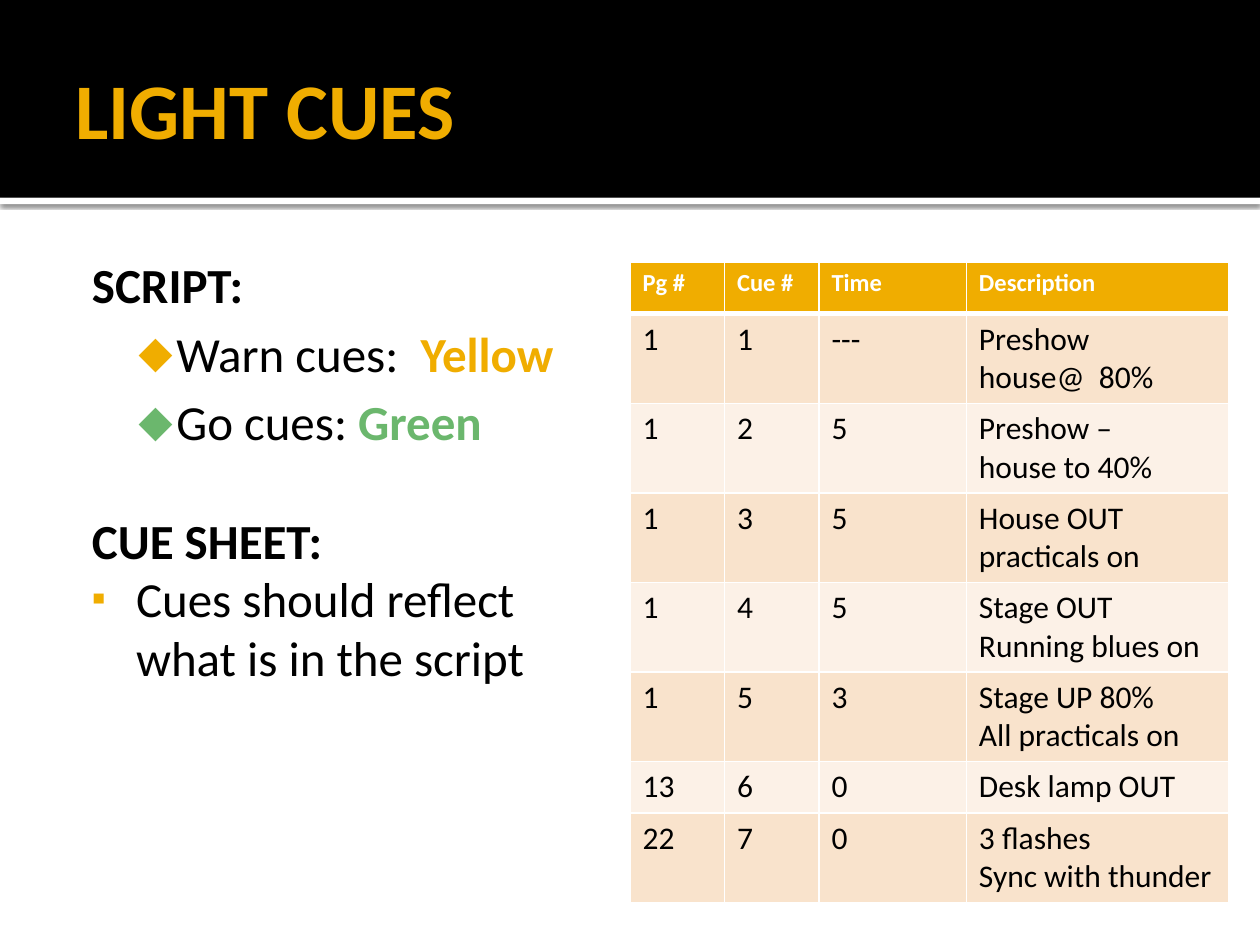
from lxml.etree import SubElement
from pptx import Presentation
from pptx.dml.color import RGBColor
from pptx.enum.shapes import MSO_SHAPE
from pptx.enum.text import MSO_ANCHOR, MSO_AUTO_SIZE, PP_ALIGN
from pptx.oxml import parse_xml
from pptx.oxml.ns import nsdecls, qn
from pptx.util import Inches, Pt

BLACK = RGBColor(0x00, 0x00, 0x00)
WHITE = RGBColor(0xFF, 0xFF, 0xFF)
AMBER = RGBColor(0xF0, 0xAD, 0x00)
GREEN = RGBColor(0x6B, 0xB7, 0x6D)
PEACH = RGBColor(0xF9, 0xE3, 0xCC)
CREAM = RGBColor(0xFC, 0xF1, 0xE7)
FONT = "Calibri"

# Content
TITLE = "LIGHT CUES"
# Styles: level, left margin, first-line indent, bullet, bullet size %
HEADING = (0, 0.13, 0, None, None)
CUE = (1, 0.8, -0.3, "◆", 90)
POINT = (0, 0.48, -0.35, "▪", 80)
# Paragraphs: style, space before in points, bullet colour, runs of (text, colour, bold)
NOTES = [
    (HEADING, 0, None, [("SCRIPT:", BLACK, True)]),
    (CUE, 5.6, AMBER, [("Warn cues:  ", BLACK, False), ("Yellow", AMBER, True)]),
    (CUE, 5.6, GREEN, [("Go cues: ", BLACK, False), ("Green", GREEN, True)]),
    (HEADING, 34, None, [("CUE SHEET:", BLACK, True)]),
    (POINT, 0, AMBER, [("Cues should reflect what is in the script", BLACK, False)]),
]
CUE_SHEET = [
    ("Pg #", "Cue #", "Time", "Description"),
    ("1", "1", "---", "Preshow\nhouse@  80%"),
    ("1", "2", "5", "Preshow –\nhouse to 40%"),
    ("1", "3", "5", "House OUT practicals on"),
    ("1", "4", "5", "Stage OUT\nRunning blues on"),
    ("1", "5", "3", "Stage UP 80%\nAll practicals on"),
    ("13", "6", "0", "Desk lamp OUT"),
    ("22", "7", "0", "3 flashes\nSync with thunder"),
]
COLUMN_WIDTHS = (0.75, 0.75, 1.17, 2.08)
ROW_HEIGHT = 0.41


def add_span(para, text, size, color, bold):
    span = para.add_run()
    span.text = text
    font = span.font
    font.name, font.size, font.bold = FONT, Pt(size), bold
    font.color.rgb = color


def place(holder, left, top, width, height, margins, anchor):
    holder.left, holder.top = Inches(left), Inches(top)
    holder.width, holder.height = Inches(width), Inches(height)
    frame = holder.text_frame
    frame.word_wrap, frame.auto_size = True, MSO_AUTO_SIZE.NONE
    frame.vertical_anchor = anchor
    (frame.margin_left, frame.margin_top,
     frame.margin_right, frame.margin_bottom) = map(Inches, margins)
    return frame


def set_bullet(para, left, indent, char, percent, color):
    props = para._p.get_or_add_pPr()
    props.set("marL", str(Inches(left)))
    props.set("indent", str(Inches(indent)))
    if char is None:
        SubElement(props, qn("a:buNone"))
        return
    fill = SubElement(props, qn("a:buClr"))
    SubElement(fill, qn("a:srgbClr"), val=str(color))
    SubElement(props, qn("a:buSzPct"), val=str(percent * 1000))
    SubElement(props, qn("a:buFont"), typeface=FONT)
    SubElement(props, qn("a:buChar"), char=char)


def set_borders(cell, top, bottom):
    props = cell._tc.get_or_add_tcPr()
    sides = (("lnL", 1), ("lnR", 1), ("lnT", top), ("lnB", bottom))
    for position, (side, width) in enumerate(sides):
        props.insert(position, parse_xml(
            f'<a:{side} {nsdecls("a")} w="{Pt(width)}"><a:solidFill>'
            f'<a:srgbClr val="{WHITE}"/></a:solidFill></a:{side}>'))


deck = Presentation()
deck.slide_width, deck.slide_height = Inches(10), Inches(7.5)
page = deck.slides.add_slide(deck.slide_layouts[1])

# Header bands, behind the placeholders
bands = []
for top, height, color in ((1.57, 0.05, WHITE), (0, 1.57, BLACK)):
    band = page.shapes.add_shape(
        MSO_SHAPE.RECTANGLE, 0, Inches(top), Inches(10), Inches(height))
    band.shadow.inherit = False
    band.fill.solid()
    band.fill.fore_color.rgb = color
    band.line.fill.background()
    page.shapes._spTree.insert(2 + len(bands), band._element)
    bands.append(band)
effects = bands[0]._element.spPr.find(qn("a:effectLst"))
effects.append(parse_xml(
    f'<a:outerShdw {nsdecls("a")} blurRad="{Pt(2.5)}" dist="{Pt(0.8)}" dir="5400000"'
    ' algn="t" rotWithShape="0"><a:srgbClr val="000000"><a:alpha val="60000"/>'
    '</a:srgbClr></a:outerShdw>'))

# Title
title = place(page.shapes.title, 0.5, 0.17, 9, 1.37,
              (0.1, 0.05, 0.05, 0.05), MSO_ANCHOR.MIDDLE)
title.paragraphs[0].alignment = PP_ALIGN.LEFT
add_span(title.paragraphs[0], TITLE, 45, AMBER, True)

# Notes on the left
body = place(page.placeholders[1], 0.5, 1.92, 4.42, 5.06,
             (0.1, 0.1, 0.1, 0.05), MSO_ANCHOR.TOP)
for number, (style, space, bullet_color, spans) in enumerate(NOTES):
    para = body.add_paragraph() if number else body.paragraphs[0]
    level, left, indent, char, percent = style
    para.level = level
    para.space_before = Pt(space)
    set_bullet(para, left, indent, char, percent, bullet_color)
    for text, color, bold in spans:
        add_span(para, text, 28, color, bold)

# Cue sheet on the right
table = page.shapes.add_table(
    len(CUE_SHEET), len(COLUMN_WIDTHS), Inches(5), Inches(2.08),
    Inches(sum(COLUMN_WIDTHS)), Inches(ROW_HEIGHT * len(CUE_SHEET))).table
for column, width in zip(table.columns, COLUMN_WIDTHS):
    column.width = Inches(width)
for r, values in enumerate(CUE_SHEET):
    table.rows[r].height = Inches(ROW_HEIGHT)
    header = r == 0
    size, color = (14, WHITE) if header else (18, BLACK)
    for c, value in enumerate(values):
        cell = table.cell(r, c)
        cell.fill.solid()
        cell.fill.fore_color.rgb = AMBER if header else PEACH if r % 2 else CREAM
        set_borders(cell, 3 if r == 1 else 1, 3 if header else 1)
        for number, line in enumerate(value.split("\n")):
            frame = cell.text_frame
            para = frame.add_paragraph() if number else frame.paragraphs[0]
            add_span(para, line, size, color, header)

deck.save("out.pptx")
